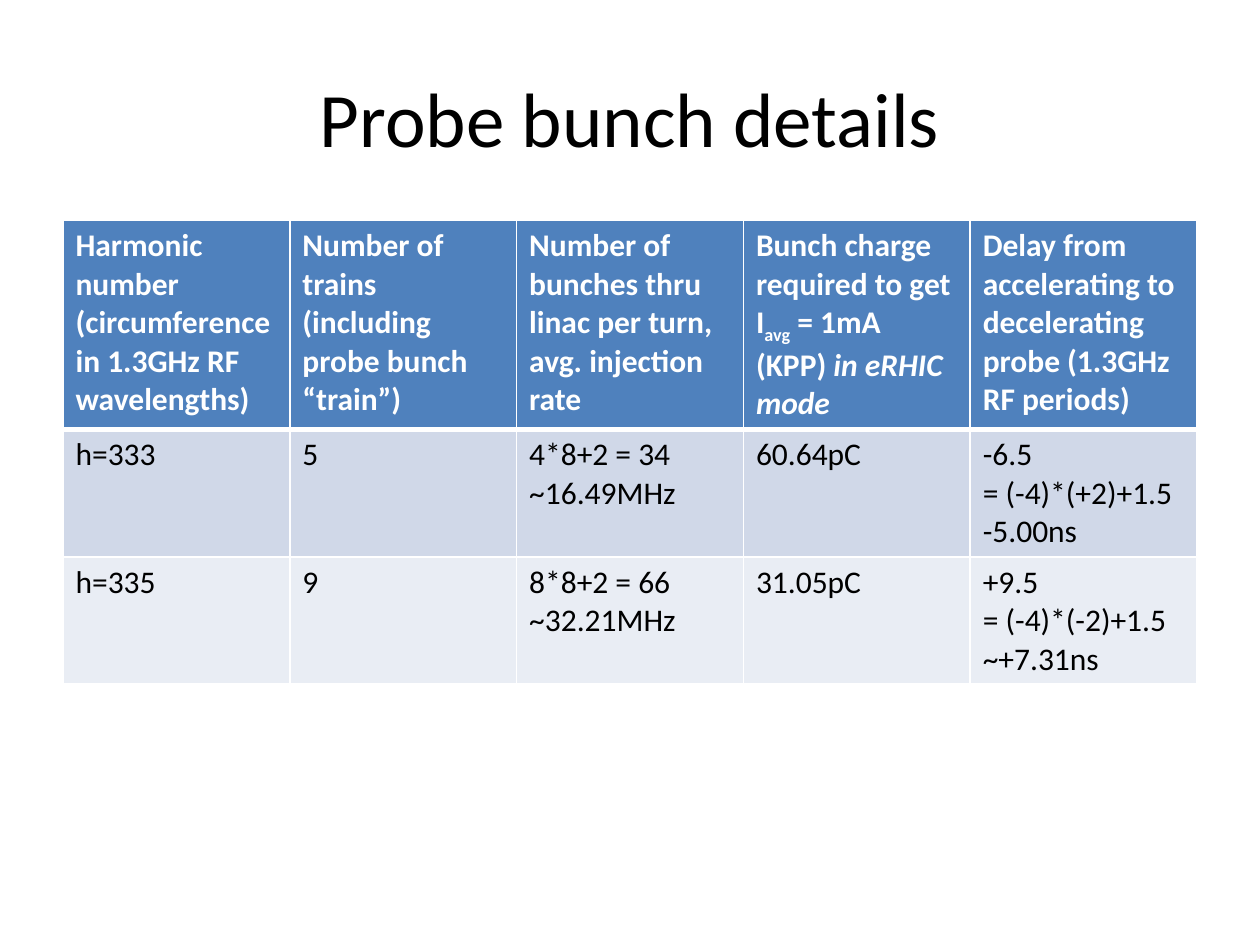
from lxml.etree import SubElement
from pptx import Presentation
from pptx.dml.color import RGBColor
from pptx.enum.text import MSO_ANCHOR, PP_ALIGN
from pptx.oxml.ns import qn
from pptx.util import Inches, Pt

TITLE = "Probe bunch details"
FONT = "Calibri"
HEADINGS = [
    "Harmonic number (circumference in 1.3GHz RF wavelengths)",
    "Number of trains (including probe bunch “train”)",
    "Number of bunches thru linac per turn, avg. injection rate",
    [("Bunch charge required to get I", ""), ("avg", "subscript"),
     (" = 1mA (KPP) ", ""), ("in eRHIC mode", "italic")],
    "Delay from accelerating to decelerating probe (1.3GHz RF periods)",
]
HARMONICS = [
    ["h=333", "5", "4*8+2 = 34\n~16.49MHz", "60.64pC",
     "-6.5\n= (-4)*(+2)+1.5\n-5.00ns"],
    ["h=335", "9", "8*8+2 = 66\n~32.21MHz", "31.05pC",
     "+9.5\n= (-4)*(-2)+1.5\n~+7.31ns"],
]
ROW_FILLS = ["4F81BD", "D0D8E8", "E9EDF4"]
ROW_HEIGHTS = [1.66, 1.01, 1.01]
COLUMN_WIDTH = 1.8


def color(value):
    return RGBColor.from_string(value)


def style(paragraph, size, text_color, bold=False):
    font = paragraph.font
    font.name, font.size, font.bold = FONT, Pt(size), bold
    font.color.rgb = color(text_color)


def add_borders(cell, top, bottom):
    properties = cell._tc.get_or_add_tcPr()
    for side, width in (("L", 1), ("R", 1), ("T", top), ("B", bottom)):
        line = SubElement(properties, qn(f"a:ln{side}"), w=str(Pt(width)))
        fill = SubElement(line, qn("a:solidFill"))
        SubElement(fill, qn("a:srgbClr"), val="FFFFFF")


def write_cell(cell, content):
    if isinstance(content, str):
        cell.text = content
        return
    for text, effect in content:
        run = cell.text_frame.paragraphs[0].add_run()
        run.text = text
        if effect == "italic":
            run.font.italic = True
        elif effect == "subscript":
            run._r.get_or_add_rPr().set("baseline", "-25000")


deck = Presentation()
deck.slide_width, deck.slide_height = Inches(10), Inches(7.5)
slide = deck.slides.add_slide(deck.slide_layouts[6])

title = slide.shapes.add_textbox(Inches(0.5), Inches(0.3), Inches(9), Inches(1.25)).text_frame
title.word_wrap = True
title.vertical_anchor = MSO_ANCHOR.MIDDLE
title.text = TITLE
title.paragraphs[0].alignment = PP_ALIGN.CENTER
style(title.paragraphs[0], 44, "000000")

rows = [HEADINGS] + HARMONICS
table = slide.shapes.add_table(
    len(rows), len(HEADINGS), Inches(0.5), Inches(1.75),
    Inches(COLUMN_WIDTH * len(HEADINGS)), Inches(sum(ROW_HEIGHTS))).table
for column in table.columns:
    column.width = Inches(COLUMN_WIDTH)

for r, (contents, row_fill, height) in enumerate(zip(rows, ROW_FILLS, ROW_HEIGHTS)):
    table.rows[r].height = Inches(height)
    heading = r == 0
    for c, content in enumerate(contents):
        cell = table.cell(r, c)
        write_cell(cell, content)
        add_borders(cell, 3 if r == 1 else 1, 3 if heading else 1)
        cell.fill.solid()
        cell.fill.fore_color.rgb = color(row_fill)
        for paragraph in cell.text_frame.paragraphs:
            style(paragraph, 18, "FFFFFF" if heading else "000000", heading)

deck.save("out.pptx")
